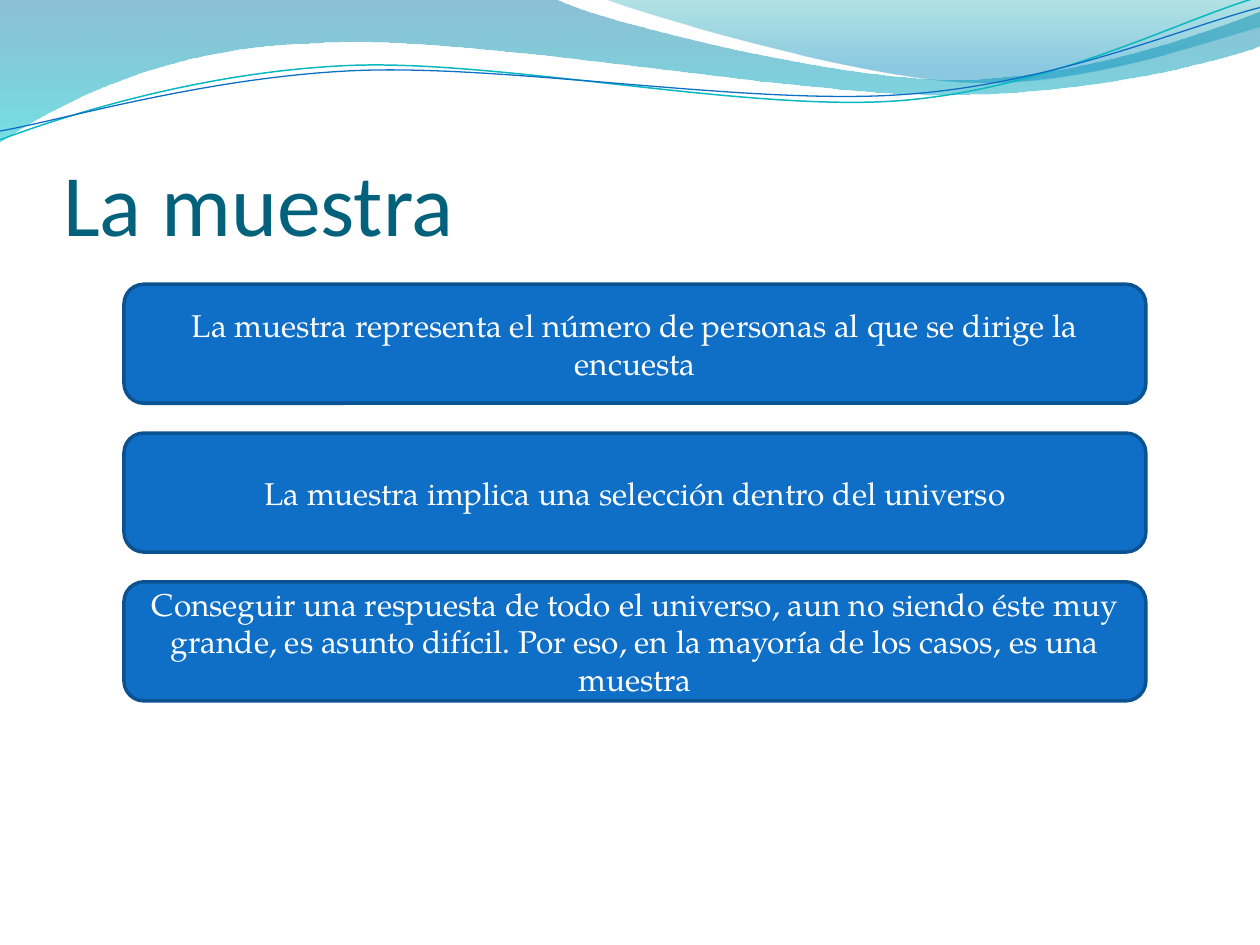
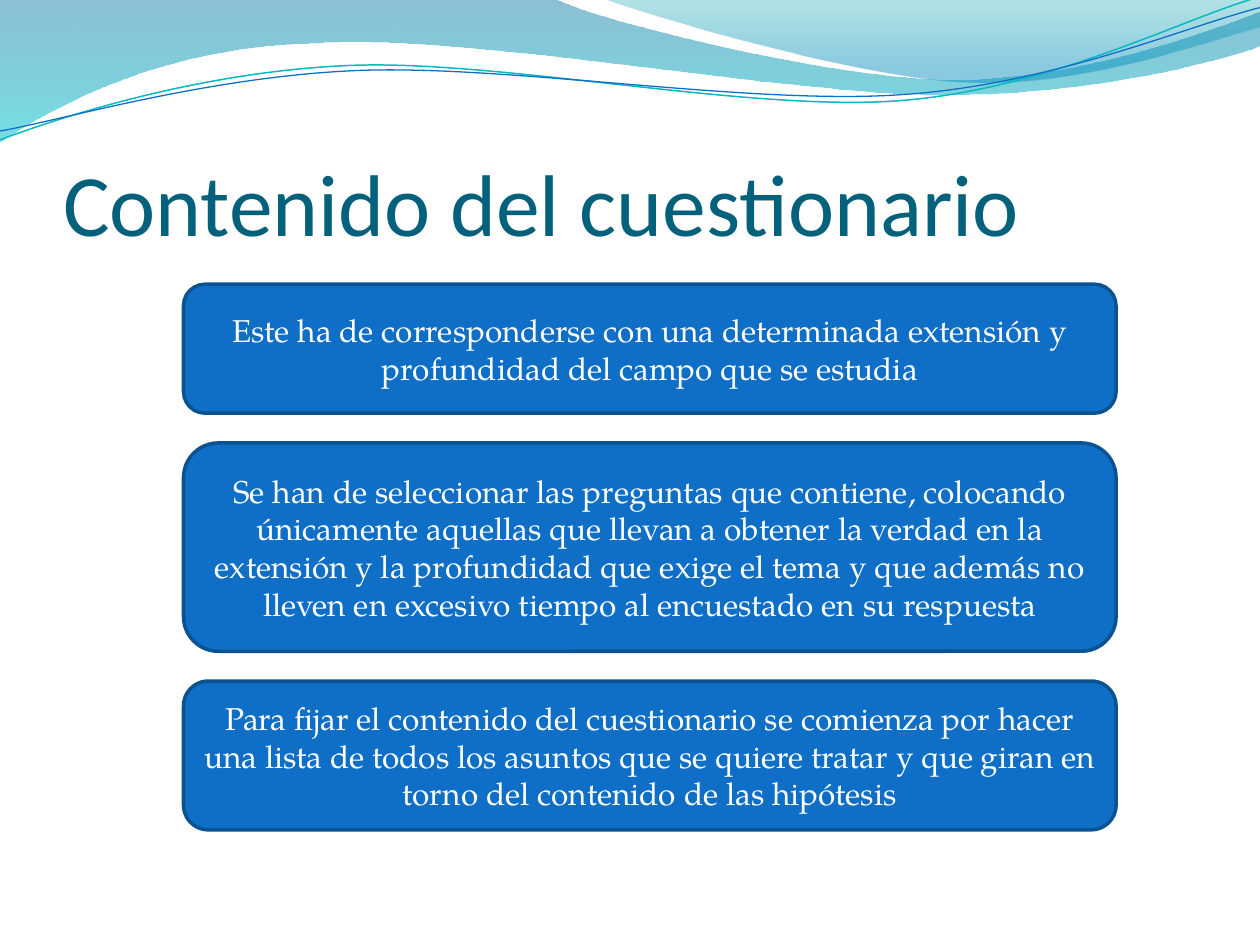
"""Build two survey-method slides with a shared wave header and stacked cards."""
from dataclasses import dataclass
from math import cos, radians, sin

from pptx import Presentation
from pptx.dml.color import RGBColor
from pptx.enum.shapes import MSO_SHAPE
from pptx.enum.text import MSO_ANCHOR, MSO_AUTO_SIZE, PP_ALIGN
from pptx.oxml.ns import qn
from pptx.util import Cm, Pt
from lxml.etree import SubElement


@dataclass(frozen=True)
class Theme:
    title_font: str = "Calibri"
    title_size: int = 50
    title_color: str = "04617B"
    card_font: str = "TeX Gyre Pagella"
    card_size: int = 18
    card_text: str = "FFFFFF"
    card_fill: str = "0F6FC6"
    card_line: str = "0B5292"
    card_line_width: float = 2
    teal_line: str = "0AB8BF"
    blue_line: str = "0F6FC6"


THEME = Theme()

PAGES = [
    {
        "title": "La muestra",
        "left": 2.5,
        "width": 20.6,
        "cards": [
            ("La muestra representa el número de personas al que se dirige la encuesta", 2.4),
            ("La muestra implica una selección dentro del universo", 2.4),
            ("Conseguir una respuesta de todo el universo, aun no siendo éste muy grande, "
             "es asunto difícil. Por eso, en la mayoría de los casos, es una muestra", 2.4),
        ],
    },
    {
        "title": "Contenido del cuestionario",
        "left": 3.7,
        "width": 18.8,
        "cards": [
            ("Este ha de corresponderse con una determinada extensión y profundidad "
             "del campo que se estudia", 2.6),
            ("Se han de seleccionar las preguntas que contiene, colocando únicamente "
             "aquellas que llevan a obtener la verdad en la extensión y la profundidad "
             "que exige el tema y que además no lleven en excesivo tiempo al encuestado "
             "en su respuesta", 4.2),
            ("Para fijar el contenido del cuestionario se comienza por hacer una lista de "
             "todos los asuntos que se quiere tratar y que giran en torno del contenido "
             "de las hipótesis", 3.0),
        ],
    },
]
CARDS_TOP, CARD_GAP = 5.73, 0.6

WAVE_UNIT = 2.54
STRAND_TILT = -2.7
STRAND_PIVOT = (4.99, 0.57)
BANDS = [
    {
        "outline": [
            (0, 0), (4.4, -0.01), (4.76, 0.17, 6.64, 0.63, 7.58, 0.63),
            (8.53, 0.63, 9.58, 0.26, 10, 0.09), (10.01, 0.36),
            (9.83, 0.44, 8.7, 0.76, 7.46, 0.75), (6.22, 0.75, 3.82, 0.28, 2.57, 0.34),
            (1.29, 0.36, 0.46, 0.83, -0.01, 1.13), (0, 0),
        ],
        "stops": [(0, "0074A1", 45), (1, "00C6CF", 55)],
    },
    {
        "outline": [
            (4.79, -0.01), (5.09, 0.11, 6.82, 0.62, 7.69, 0.65),
            (8.56, 0.69, 9.61, 0.32, 10, 0.21), (10, 0), (4.79, -0.01),
        ],
        "stops": [(0, "00A1A9", 30), (0.8, "008BBF", 45)],
    },
]
STRANDS = [
    {
        "outline": [
            (0, 1.11), (0.48, 0.93, 1.58, 0.57, 2.77, 0.52),
            (3.95, 0.47, 5.93, 0.89, 7.13, 0.8), (8.33, 0.71, 9.38, 0.15, 9.98, -0.02),
        ],
        "color": THEME.teal_line,
        "width": 0.85,
    },
    {
        "outline": [
            (0, 1.04), (0.47, 0.96, 1.64, 0.61, 2.83, 0.56),
            (4.03, 0.51, 5.97, 0.84, 7.17, 0.75), (8.36, 0.67, 9.41, 0.21, 10, 0.06),
        ],
        "color": THEME.blue_line,
        "width": 0.75,
    },
]


def color(code):
    return RGBColor.from_string(code)


def place(x, y, tilt):
    turn = radians(-tilt)
    across, down = x - STRAND_PIVOT[0], y - STRAND_PIVOT[1]
    level_x = STRAND_PIVOT[0] + across * cos(turn) - down * sin(turn)
    level_y = STRAND_PIVOT[1] + across * sin(turn) + down * cos(turn)
    return Cm(WAVE_UNIT * level_x), Cm(WAVE_UNIT * level_y)


def draw_wave(page, outline, closed, tilt=0):
    segments = [[place(*segment[i:i + 2], tilt) for i in range(0, len(segment), 2)]
                for segment in outline]
    anchors = [segment[-1] for segment in segments]
    builder = page.shapes.build_freeform(*anchors[0])
    builder.add_line_segments(anchors[1:], close=closed)
    wave = builder.convert_to_shape()
    for line, segment in zip(list(wave.element.iter(qn("a:lnTo"))), segments[1:]):
        if len(segment) == 3:
            curve = line.makeelement(qn("a:cubicBezTo"), {})
            for x, y in segment:
                SubElement(curve, qn("a:pt"), x=str(x - wave.left), y=str(y - wave.top))
            line.getparent().replace(line, curve)
    wave.rotation = tilt % 360
    wave.shadow.inherit = False
    return wave


def draw_band(page, band):
    wave = draw_wave(page, band["outline"], True)
    wave.line.fill.background()
    wave.fill.gradient()
    wave.fill.gradient_angle = 270
    for stop, (position, code, _) in zip(wave.fill.gradient_stops, band["stops"]):
        stop.position = position
        stop.color.rgb = color(code)
    for element, (_, _, opacity) in zip(wave.element.iter(qn("a:srgbClr")), band["stops"]):
        SubElement(element, qn("a:alpha"), val=str(opacity * 1000))
    return wave


def draw_strand(page, strand):
    wave = draw_wave(page, strand["outline"], False, STRAND_TILT)
    wave.fill.background()
    wave.line.color.rgb = color(strand["color"])
    wave.line.width = Pt(strand["width"])
    return wave


def share_waves(page):
    waves = [draw_band(page, band) for band in BANDS]
    waves += [draw_strand(page, strand) for strand in STRANDS]
    tree = page.slide_layout.shapes.element
    for index, wave in enumerate(waves):
        wave.element.nvSpPr.cNvPr.set("id", str(100 + index))
        tree.insert(2 + index, wave.element)


def style_text(frame, font, size, code, alignment):
    frame.word_wrap = True
    for para in frame.paragraphs:
        para.alignment = alignment
        for span in para.runs:
            span.font.name = font
            span.font.size = Pt(size)
            span.font.color.rgb = color(code)


def write_title(page, text):
    title = page.shapes.title
    title.left, title.top, title.width, title.height = Cm(1.27), Cm(1.95), Cm(23.06), Cm(3.17)
    frame = title.text_frame
    frame.text = text
    frame.auto_size = MSO_AUTO_SIZE.NONE
    frame.vertical_anchor = MSO_ANCHOR.BOTTOM
    frame.margin_left = frame.margin_right = frame.margin_bottom = 0
    style_text(frame, THEME.title_font, THEME.title_size, THEME.title_color, PP_ALIGN.LEFT)


def stack_cards(page, content):
    top = CARDS_TOP
    for text, height in content["cards"]:
        card = page.shapes.add_shape(
            MSO_SHAPE.ROUNDED_RECTANGLE,
            Cm(content["left"]), Cm(top), Cm(content["width"]), Cm(height))
        card.shadow.inherit = False
        card.fill.solid()
        card.fill.fore_color.rgb = color(THEME.card_fill)
        card.line.color.rgb = color(THEME.card_line)
        card.line.width = Pt(THEME.card_line_width)
        card.text_frame.text = text
        card.text_frame.vertical_anchor = MSO_ANCHOR.MIDDLE
        style_text(card.text_frame, THEME.card_font, THEME.card_size, THEME.card_text,
                   PP_ALIGN.CENTER)
        top += height + CARD_GAP


def main():
    deck = Presentation()
    deck.slide_width, deck.slide_height = Cm(25.4), Cm(19.05)
    layout = deck.slide_layouts.get_by_name("Title Only")
    for number, content in enumerate(PAGES):
        page = deck.slides.add_slide(layout)
        if number == 0:
            share_waves(page)
        write_title(page, content["title"])
        stack_cards(page, content)
    deck.save("out.pptx")


if __name__ == "__main__":
    main()
